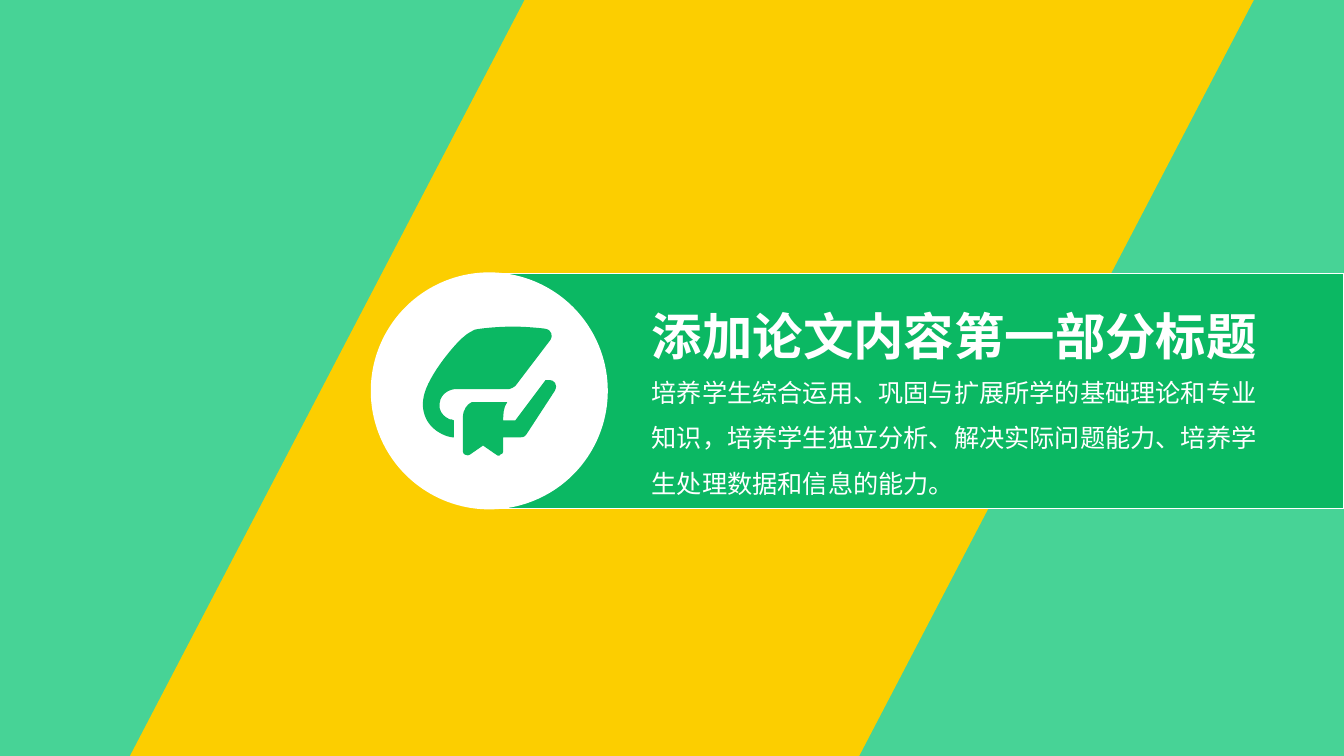
from dataclasses import dataclass

from lxml import etree
from pptx import Presentation
from pptx.dml.color import RGBColor
from pptx.enum import shapes, text
from pptx.oxml import ns
from pptx.util import Pt


@dataclass(frozen=True)
class Theme:
    mint: RGBColor = RGBColor(0x47, 0xD3, 0x96)
    yellow: RGBColor = RGBColor(0xFC, 0xCE, 0x00)
    green: RGBColor = RGBColor(0x0B, 0xB8, 0x63)
    white: RGBColor = RGBColor(0xFF, 0xFF, 0xFF)
    font: str = "Arial"
    title_size: int = 36
    body_size: int = 18
    line_spacing: float = 1.5


THEME = Theme()
WIDTH, HEIGHT = 960, 540
BAND_LEFT, BAND_TOP, BAND_HEIGHT = 347, 195.3, 167.8
BADGE_LEFT, BADGE_INSET = 265.6, 11.5
TEXT_LEFT, TEXT_WIDTH = 458.4, 449.3

TITLE = "添加论文内容第一部分标题"
BODY = (
    "培养学生综合运用、巩固与扩展所学的基础理论和专业知识，"
    "培养学生独立分析、解决实际问题能力、培养学生处理数据和信息的能力。"
)

ICON_LEFT, ICON_TOP, ICON_UNIT = 302.6, 233.3, 0.72
BOOK_PAGES = [
    (121, 53), (125, 53), (129, 53, 134, 57, 130, 64), (102, 107),
    (100, 110, 97, 110, 95, 110), (79, 110), (79, 124),
    (79, 125, 78, 127, 76, 127), (76, 128, 75, 128, 74, 128),
    (74, 128, 73, 128, 72, 127), (59, 118), (46, 127),
    (45, 128, 43, 128, 41, 127), (40, 127, 39, 125, 39, 124), (39, 90),
    (39, 82, 44, 77, 46, 76), (47, 75, 48, 75, 48, 75), (83, 75),
    (79, 80, 79, 88, 79, 93), (91, 93),
]
BOOK_COVER = [
    (89, 0), (100, 0, 111, 1, 120, 2), (128, 3, 128, 10, 126, 13), (91, 59),
    (89, 60, 87, 62, 85, 62), (32, 62), (26, 62, 14, 67, 16, 81),
    (17, 86, 21, 90, 26, 92), (27, 92, 29, 92, 30, 93), (30, 110),
    (23, 110, 4, 103, 0, 84), (-1, 80, -1, 75, 0, 70),
    (4, 48, 34, 14, 40, 10), (43, 7, 47, 5, 51, 3), (55, 2, 72, 0, 89, 0),
]


def paint(shape, fill, line_width=0):
    shape.shadow.inherit = False
    shape.fill.solid()
    shape.fill.fore_color.rgb = fill
    if line_width:
        shape.line.color.rgb = THEME.white
        shape.line.width = Pt(line_width)
    else:
        shape.line.fill.background()


def add_panel(slide, kind, box, fill, line_width=0):
    shape = slide.shapes.add_shape(kind, *map(Pt, box))
    paint(shape, fill, line_width)
    return shape


def write_text(shape, content, size, bold=False):
    frame = shape.text_frame
    frame.text = content
    frame.word_wrap = True
    frame.auto_size = text.MSO_AUTO_SIZE.SHAPE_TO_FIT_TEXT
    frame.vertical_anchor = text.MSO_ANCHOR.TOP
    paragraph = frame.paragraphs[0]
    paragraph.alignment = text.PP_ALIGN.LEFT
    paragraph.line_spacing = THEME.line_spacing
    paragraph.space_before = Pt(0)
    paragraph.font.name = THEME.font
    paragraph.font.size = Pt(size)
    paragraph.font.bold = bold
    paragraph.font.color.rgb = THEME.white


def add_title(slide, box):
    title = slide.shapes.title
    title.left, title.top, title.width, title.height = map(Pt, box)
    write_text(title, TITLE, THEME.title_size, bold=True)
    title.element.getparent().append(title.element)


def add_body(slide, box):
    body = slide.shapes.add_textbox(*map(Pt, box))
    write_text(body, BODY, THEME.body_size)


def bend_segments(shape, segments):
    lines = list(shape.element.iter(ns.qn("a:lnTo")))
    for line, segment in zip(lines, segments):
        if len(segment) == 2:
            continue
        curve = etree.Element(ns.qn("a:cubicBezTo"))
        for x, y in zip(segment[::2], segment[1::2]):
            etree.SubElement(curve, ns.qn("a:pt"), x=str(x), y=str(y))
        line.getparent().replace(line, curve)


def add_book_icon(slide):
    outlines = (BOOK_PAGES, BOOK_COVER)
    builder = slide.shapes.build_freeform(*BOOK_PAGES[0], scale=Pt(ICON_UNIT))
    for outline in outlines:
        if outline is not BOOK_PAGES:
            builder.move_to(*outline[0])
        builder.add_line_segments([segment[-2:] for segment in outline[1:]], close=True)
    icon = builder.convert_to_shape(Pt(ICON_LEFT), Pt(ICON_TOP))
    bend_segments(icon, [segment for outline in outlines for segment in outline[1:]])
    paint(icon, THEME.green)


def main():
    presentation = Presentation()
    presentation.slide_width, presentation.slide_height = Pt(WIDTH), Pt(HEIGHT)
    slide = presentation.slides.add_slide(presentation.slide_layouts[5])
    kinds = shapes.MSO_SHAPE

    add_panel(slide, kinds.RECTANGLE, (0, 0, WIDTH, HEIGHT), THEME.mint)
    stripe = add_panel(slide, kinds.PARALLELOGRAM, (92.8, 0, 802.8, HEIGHT), THEME.yellow)
    stripe.adjustments[0] = 0.522
    band = (BAND_LEFT, BAND_TOP, WIDTH - BAND_LEFT, BAND_HEIGHT)
    add_panel(slide, kinds.RECTANGLE, band, THEME.green, line_width=1)

    add_title(slide, (TEXT_LEFT, 192.5, TEXT_WIDTH, 64.8))
    add_body(slide, (TEXT_LEFT, 255.2, TEXT_WIDTH, 105.1))

    for inset, line_width in ((0, 1.5), (BADGE_INSET, 0)):
        size = BAND_HEIGHT - 2 * inset
        badge = (BADGE_LEFT + inset, BAND_TOP + inset, size, size)
        add_panel(slide, kinds.OVAL, badge, THEME.white, line_width)
    add_book_icon(slide)

    presentation.save("out.pptx")


if __name__ == "__main__":
    main()
